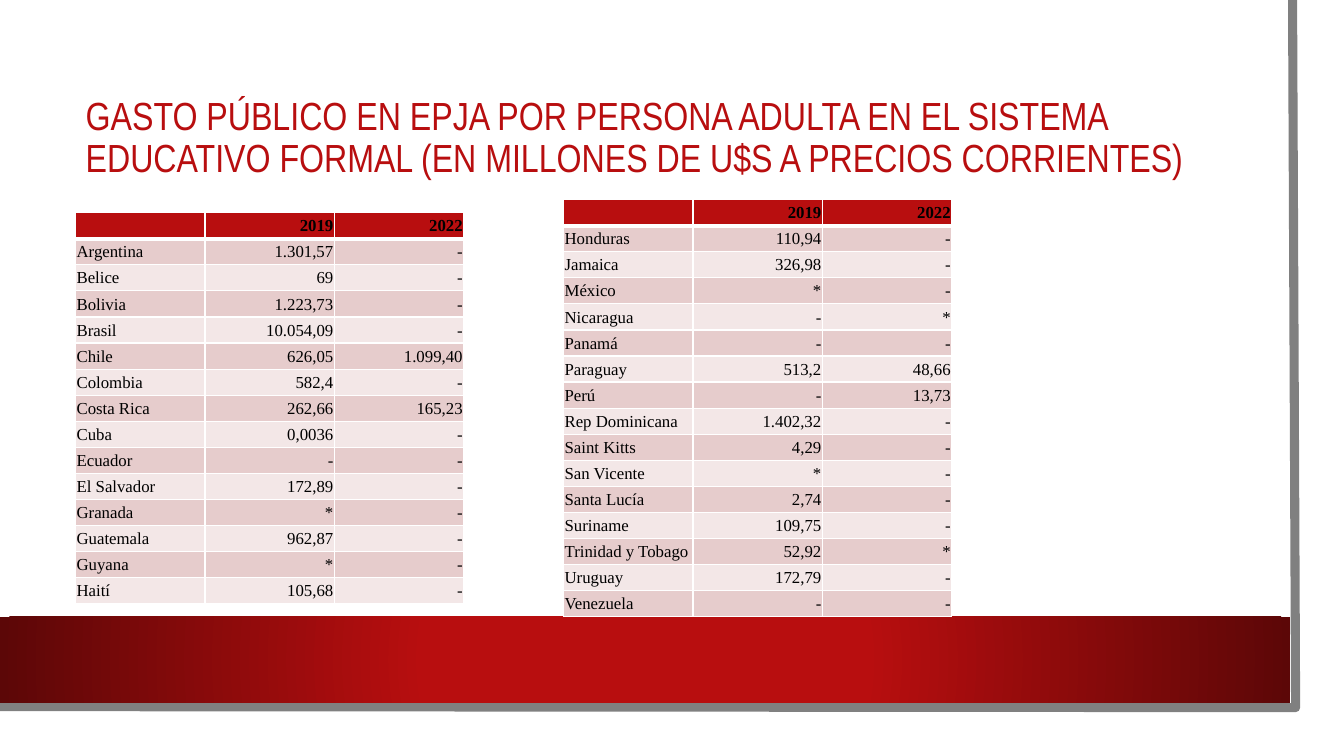
from lxml.etree import SubElement
from pptx import Presentation
from pptx.dml.color import RGBColor
from pptx.enum.shapes import MSO_SHAPE as Shape
from pptx.enum.text import MSO_ANCHOR as Anchor, MSO_AUTO_SIZE as AutoSize, PP_ALIGN as Align
from pptx.oxml import parse_xml
from pptx.oxml.ns import nsdecls, qn
from pptx.util import Inches, Pt

RED, DARK_RED, GRAY = "B80E0F", "5C0707", "808080"
BLACK, WHITE = "000000", "FFFFFF"
BANDS = ["F3E7E7", "E6CCCC"]


def color(value):
    return RGBColor.from_string(value)


def write(frame, text, font, size, fill=BLACK, bold=False, align=Align.LEFT, spacing=1.0):
    paragraph = frame.paragraphs[0]
    paragraph.alignment = align
    paragraph.line_spacing = spacing
    if not text:
        SubElement(paragraph._p, qn("a:endParaRPr"), sz=str(size * 100))
        return
    run = paragraph.add_run()
    run.text = text
    run.font.name = font
    run.font.size = Pt(size)
    run.font.bold = bold
    run.font.color.rgb = color(fill)


presentation = Presentation()
presentation.slide_width = Inches(13.33)
presentation.slide_height = Inches(7.5)
slide = presentation.slides.add_slide(presentation.slide_layouts[5])

builder = slide.shapes.build_freeform(Inches(12.82), 0)
builder.add_line_segments(
    [(Inches(12.85), Inches(7.02)), (Inches(-0.03), Inches(7.01))], close=False
)
frame_edge = builder.convert_to_shape()
frame_edge.shadow.inherit = False
frame_edge.fill.background()
frame_edge.line.color.rgb = color(GRAY)
frame_edge.line.width = Pt(6.5)

band = slide.shapes.add_shape(Shape.RECTANGLE, 0, Inches(6.12), Inches(12.8), Inches(0.85))
band.shadow.inherit = False
band.line.fill.background()
band.fill.gradient()
for stop, position, fill in zip(band.fill.gradient_stops, [0.34, 1], [RED, DARK_RED]):
    stop.position = position
    stop.color.rgb = color(fill)
gradient = band.element.spPr.find(qn("a:gradFill"))
gradient.replace(
    gradient.find(qn("a:lin")),
    parse_xml(
        f'<a:path {nsdecls("a")} path="circle">'
        '<a:fillToRect l="50000" t="50000" r="50000" b="50000"/></a:path>'
    ),
)

title = slide.shapes.title
band.element.addnext(title.element)
title.left, title.top = Inches(0.75), Inches(0.75)
title.width, title.height = Inches(11.37), Inches(1.26)
title.text_frame.word_wrap = True
title.text_frame.auto_size = AutoSize.NONE
title.text_frame.vertical_anchor = Anchor.MIDDLE
write(
    title.text_frame,
    "GASTO PÚBLICO EN EPJA POR PERSONA ADULTA EN EL SISTEMA EDUCATIVO FORMAL "
    "(EN MILLONES DE U$S A PRECIOS CORRIENTES)",
    font="Arial Narrow", size=28, fill=RED, spacing=0.9,
)

header = ("", "2019", "2022")
first_countries = [
    header,
    ("Argentina", "1.301,57", "-"),
    ("Belice", "69", "-"),
    ("Bolivia", "1.223,73", "-"),
    ("Brasil", "10.054,09", "-"),
    ("Chile", "626,05", "1.099,40"),
    ("Colombia", "582,4", "-"),
    ("Costa Rica", "262,66", "165,23"),
    ("Cuba", "0,0036", "-"),
    ("Ecuador", "-", "-"),
    ("El Salvador", "172,89", "-"),
    ("Granada", "*", "-"),
    ("Guatemala", "962,87", "-"),
    ("Guyana", "*", "-"),
    ("Haití", "105,68", "-"),
]
last_countries = [
    header,
    ("Honduras", "110,94", "-"),
    ("Jamaica", "326,98", "-"),
    ("México", "*", "-"),
    ("Nicaragua", "-", "*"),
    ("Panamá", "-", "-"),
    ("Paraguay", "513,2", "48,66"),
    ("Perú", "-", "13,73"),
    ("Rep Dominicana", "1.402,32", "-"),
    ("Saint Kitts", "4,29", "-"),
    ("San Vicente", "*", "-"),
    ("Santa Lucía", "2,74", "-"),
    ("Suriname", "109,75", "-"),
    ("Trinidad y Tobago", "52,92", "*"),
    ("Uruguay", "172,79", "-"),
    ("Venezuela", "-", "-"),
]

for rows, left, top, height in [
    (first_countries, 0.75, 2.11, 3.88),
    (last_countries, 5.59, 1.98, 4.14),
]:
    table = slide.shapes.add_table(
        len(rows), len(header), Inches(left), Inches(top), Inches(3.85), Inches(height)
    ).table
    for row_index, row in enumerate(rows):
        for column_index, text in enumerate(row):
            cell = table.cell(row_index, column_index)
            cell.margin_left = cell.margin_right = cell.margin_top = Inches(0.01)
            cell.margin_bottom = 0
            cell.vertical_anchor = Anchor.MIDDLE
            widths = {
                "lnL": 1,
                "lnR": 1,
                "lnT": 3 if row_index == 1 else 1,
                "lnB": 3 if row_index == 0 else 1,
            }
            for side, width in widths.items():
                border = SubElement(cell._tc.get_or_add_tcPr(), qn(f"a:{side}"), w=str(Pt(width)))
                SubElement(SubElement(border, qn("a:solidFill")), qn("a:srgbClr"), val=WHITE)
            cell.fill.solid()
            cell.fill.fore_color.rgb = color(BANDS[row_index % 2] if row_index else RED)
            write(
                cell.text_frame, text, font="Times New Roman", size=12, bold=row_index == 0,
                align=Align.RIGHT if column_index else Align.JUSTIFY,
            )

presentation.save("out.pptx")
